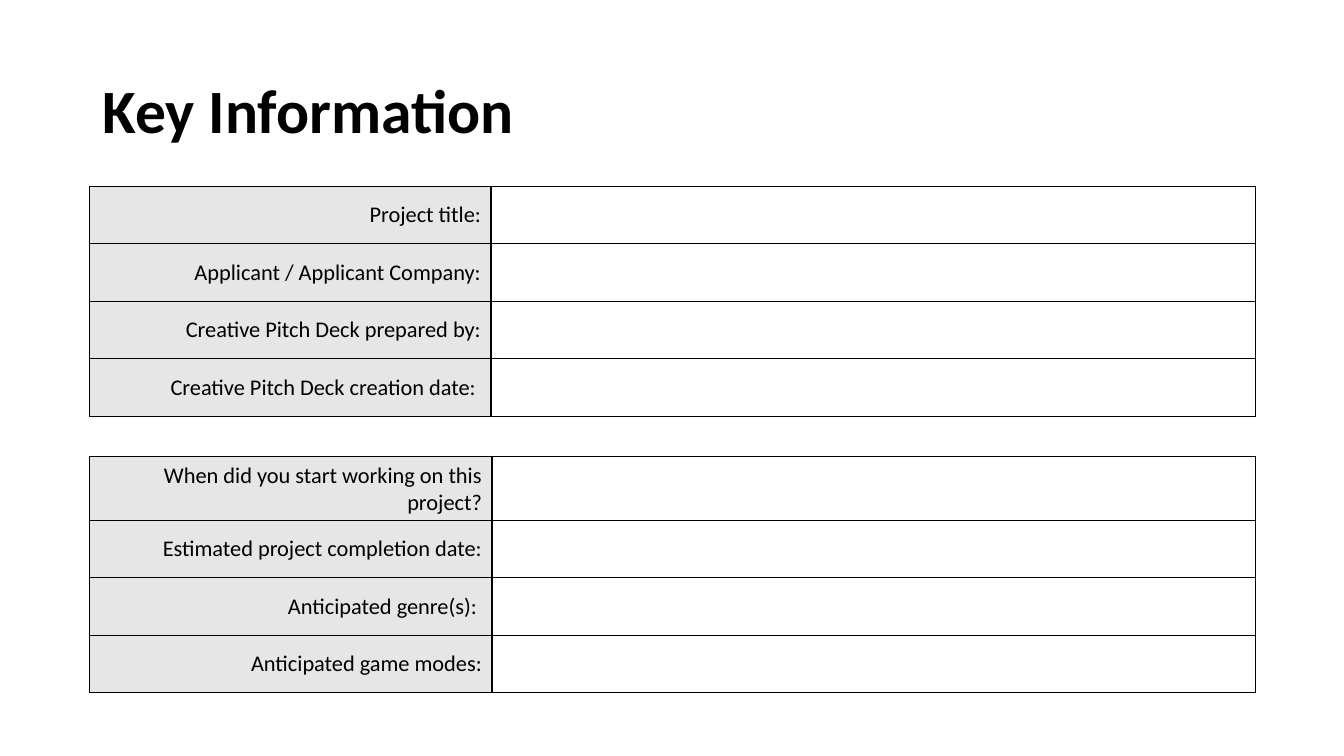
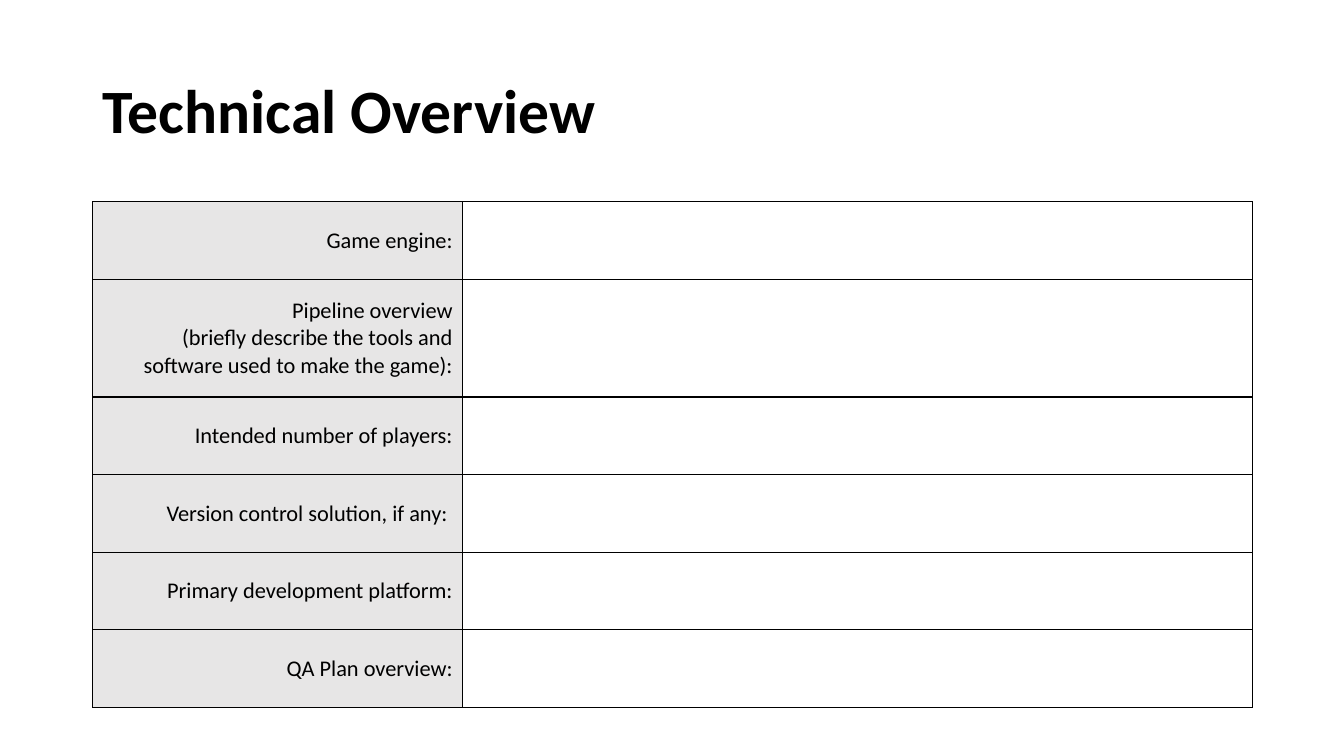
from lxml import etree
from pptx import Presentation, util as u
from pptx.dml.color import RGBColor
from pptx.enum import text as t
from pptx.oxml.ns import qn

BLACK = RGBColor(0x00, 0x00, 0x00)
WHITE = RGBColor(0xFF, 0xFF, 0xFF)
LABEL_GREY = RGBColor(0xE7, 0xE6, 0xE6)
FONT = "Calibri"
SLIDE_SIZE = (13.33, 7.5)
TITLE_BOX = (0.92, 0.4, 11.5, 1.45)
ROW = 0.57
TALL_ROW = 0.77

# Each form: left, top, column widths, then rows of (label, height)
SLIDES = [
    {
        "title": "Key Information",
        "forms": [
            (0.89, 1.85, (3.98, 7.58), [
                ("Project title:", ROW),
                ("Applicant / Applicant Company:", ROW),
                ("Creative Pitch Deck prepared by:", ROW),
                ("Creative Pitch Deck creation date: ", ROW),
            ]),
            (0.89, 4.53, (3.99, 7.57), [
                ("When did you start working on this project?", ROW),
                ("Estimated project completion date:", ROW),
                ("Anticipated genre(s): ", ROW),
                ("Anticipated game modes:", ROW),
            ]),
        ],
    },
    {
        "title": "Technical Overview",
        "forms": [
            (0.92, 2, (3.67, 7.83), [
                ("Game engine:", TALL_ROW),
                ("Pipeline overview\n(briefly describe the tools and "
                 "software used to make the game):", 1.17),
                ("Intended number of players:", TALL_ROW),
                ("Version control solution, if any: ", TALL_ROW),
                ("Primary development platform:", TALL_ROW),
                ("QA Plan overview:", TALL_ROW),
            ]),
        ],
    },
]


def write(frame, words, size, bold=False, align=t.PP_ALIGN.LEFT, spacing=None):
    """Fill a text frame with one paragraph; newlines become line breaks."""
    para = frame.paragraphs[0]
    para.alignment = align
    para.line_spacing = spacing
    for number, line in enumerate(words.split("\n")):
        if number:
            para.add_line_break()
        span = para.add_run()
        span.text = line
        span.font.name = FONT
        span.font.size = u.Pt(size)
        span.font.bold = bold
        span.font.color.rgb = BLACK


def add_title(page, words):
    box = page.shapes.add_textbox(*map(u.Inches, TITLE_BOX))
    frame = box.text_frame
    frame.word_wrap = True
    frame.vertical_anchor = t.MSO_ANCHOR.MIDDLE
    write(frame, words, 44, bold=True, spacing=0.9)


def outline(cell, color=BLACK, width=1):
    """Draw all four borders; they must come before the fill in the XML."""
    properties = cell._tc.get_or_add_tcPr()
    for index, side in enumerate(("lnL", "lnR", "lnT", "lnB")):
        line = etree.Element(qn(f"a:{side}"), w=str(u.Pt(width)))
        fill = etree.SubElement(line, qn("a:solidFill"))
        etree.SubElement(fill, qn("a:srgbClr"), val=str(color))
        properties.insert(index, line)


def add_form(page, left, top, widths, rows):
    """Add a table of grey labels with an empty answer cell beside each."""
    height = sum(row_height for _, row_height in rows)
    place = map(u.Inches, (left, top, sum(widths), height))
    table = page.shapes.add_table(len(rows), len(widths), *place).table
    table.first_row = table.horz_banding = False
    for column, width in zip(table.columns, widths):
        column.width = u.Inches(width)
    for row, (label, row_height) in zip(table.rows, rows):
        row.height = u.Inches(row_height)
        for cell, color in zip(row.cells, (LABEL_GREY, WHITE)):
            cell.fill.solid()
            cell.fill.fore_color.rgb = color
            cell.vertical_anchor = t.MSO_ANCHOR.MIDDLE
            outline(cell)
        write(row.cells[0].text_frame, label, 16, align=t.PP_ALIGN.RIGHT)


def main():
    deck = Presentation()
    deck.slide_width, deck.slide_height = map(u.Inches, SLIDE_SIZE)
    for content in SLIDES:
        page = deck.slides.add_slide(deck.slide_layouts[6])
        add_title(page, content["title"])
        for form in content["forms"]:
            add_form(page, *form)
    deck.save("out.pptx")


if __name__ == "__main__":
    main()
